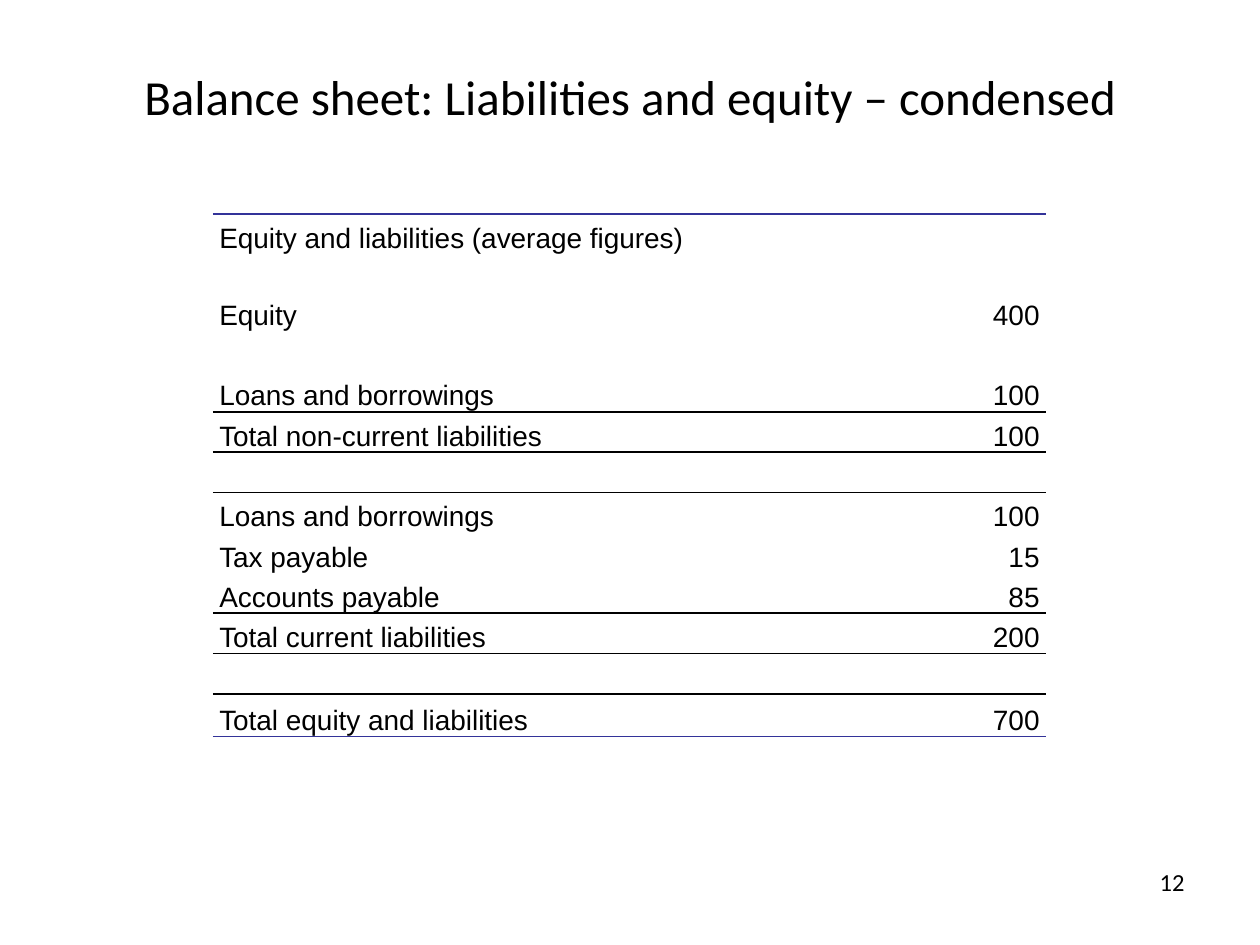
from typing import NamedTuple, Optional

import lxml.etree
import pptx
import pptx.dml.color
import pptx.enum.text
import pptx.oxml.ns
import pptx.util

Inches, Pt = pptx.util.Inches, pptx.util.Pt
RGBColor = pptx.dml.color.RGBColor
ALIGN, ANCHOR = pptx.enum.text.PP_ALIGN, pptx.enum.text.MSO_ANCHOR
qn = pptx.oxml.ns.qn

BLACK = RGBColor(0x00, 0x00, 0x00)
BLUE = RGBColor(0x33, 0x33, 0x99)
NO_GRID_STYLE = "{2D5ABB26-0587-4C30-8999-92F81FD0307C}"
COLUMN_WIDTHS = (5.46, 1.15)


class Line(NamedTuple):
    label: str = ""
    amount: str = ""
    rule: Optional[RGBColor] = None  # colour of the rule below the row
    height: float = 0.32


LINES = (
    Line("Equity and liabilities (average figures)"),
    Line(height=0.29),
    Line("Equity", "400"),
    Line(),
    Line("Loans and borrowings", "100", BLACK),
    Line("Total non-current liabilities", "100", BLACK),
    Line(),
    Line("Loans and borrowings", "100"),
    Line("Tax payable", "15"),
    Line("Accounts payable", "85", BLACK),
    Line("Total current liabilities", "200", BLACK),
    Line(),
    Line("Total equity and liabilities", "700", BLUE, 0.34),
)


def write(tf, text: str, *, size: float, font: str, align=ALIGN.LEFT) -> None:
    p = tf.paragraphs[0]
    p.alignment = align
    if not text:
        # An empty cell still takes its line height from the end mark.
        lxml.etree.SubElement(p._p, qn("a:endParaRPr"), sz=str(int(size * 100)))
        return
    r = p.add_run()
    r.text = text
    r.font.size = Pt(size)
    r.font.name = font
    r.font.bold = False
    r.font.color.rgb = BLACK


def add_border(cell, side: str, color: Optional[RGBColor]) -> None:
    if color is None:
        return
    ln = lxml.etree.SubElement(cell._tc.get_or_add_tcPr(), qn(f"a:ln{side}"),
                               w=str(Pt(1)))
    fill = lxml.etree.SubElement(ln, qn("a:solidFill"))
    lxml.etree.SubElement(fill, qn("a:srgbClr"), val=str(color))


def add_balance_sheet(slide) -> None:
    height = sum(line.height for line in LINES)
    frame = slide.shapes.add_table(
        len(LINES), len(COLUMN_WIDTHS), Inches(1.69), Inches(1.7),
        Inches(sum(COLUMN_WIDTHS)), Inches(height))
    table = frame.table
    table.first_row = table.horz_banding = False
    table._tbl.tblPr.find(qn("a:tableStyleId")).text = NO_GRID_STYLE
    for column, width in zip(table.columns, COLUMN_WIDTHS):
        column.width = Inches(width)

    rule_above = BLUE
    for row, line in zip(table.rows, LINES):
        row.height = Inches(line.height)
        entries = ((line.label, ALIGN.LEFT), (line.amount, ALIGN.RIGHT))
        for cell, (text, align) in zip(row.cells, entries):
            cell.margin_left = cell.margin_right = Inches(0.05)
            cell.margin_top = cell.margin_bottom = 0
            cell.vertical_anchor = ANCHOR.BOTTOM
            write(cell.text_frame, text, size=16, font="Arial", align=align)
            add_border(cell, "T", rule_above)
            add_border(cell, "B", line.rule)
            cell.fill.background()
        rule_above = line.rule


def main() -> None:
    prs = pptx.Presentation()
    prs.slide_width, prs.slide_height = Inches(10), Inches(7.5)
    slide = prs.slides.add_slide(prs.slide_layouts[5])

    title = slide.shapes.title
    title.left, title.top = Inches(0.5), Inches(0.3)
    title.width, title.height = Inches(9), Inches(0.93)
    title.text_frame.vertical_anchor = ANCHOR.MIDDLE
    write(title.text_frame, "Balance sheet: Liabilities and equity – condensed",
          size=28, font="Calibri", align=ALIGN.CENTER)

    add_balance_sheet(slide)

    number = slide.shapes.add_textbox(
        Inches(7.17), Inches(6.83), Inches(2.33), Inches(0.52))
    number.text_frame.word_wrap = True
    write(number.text_frame, "12", size=14, font="Calibri", align=ALIGN.RIGHT)

    prs.save("out.pptx")


if __name__ == "__main__":
    main()
